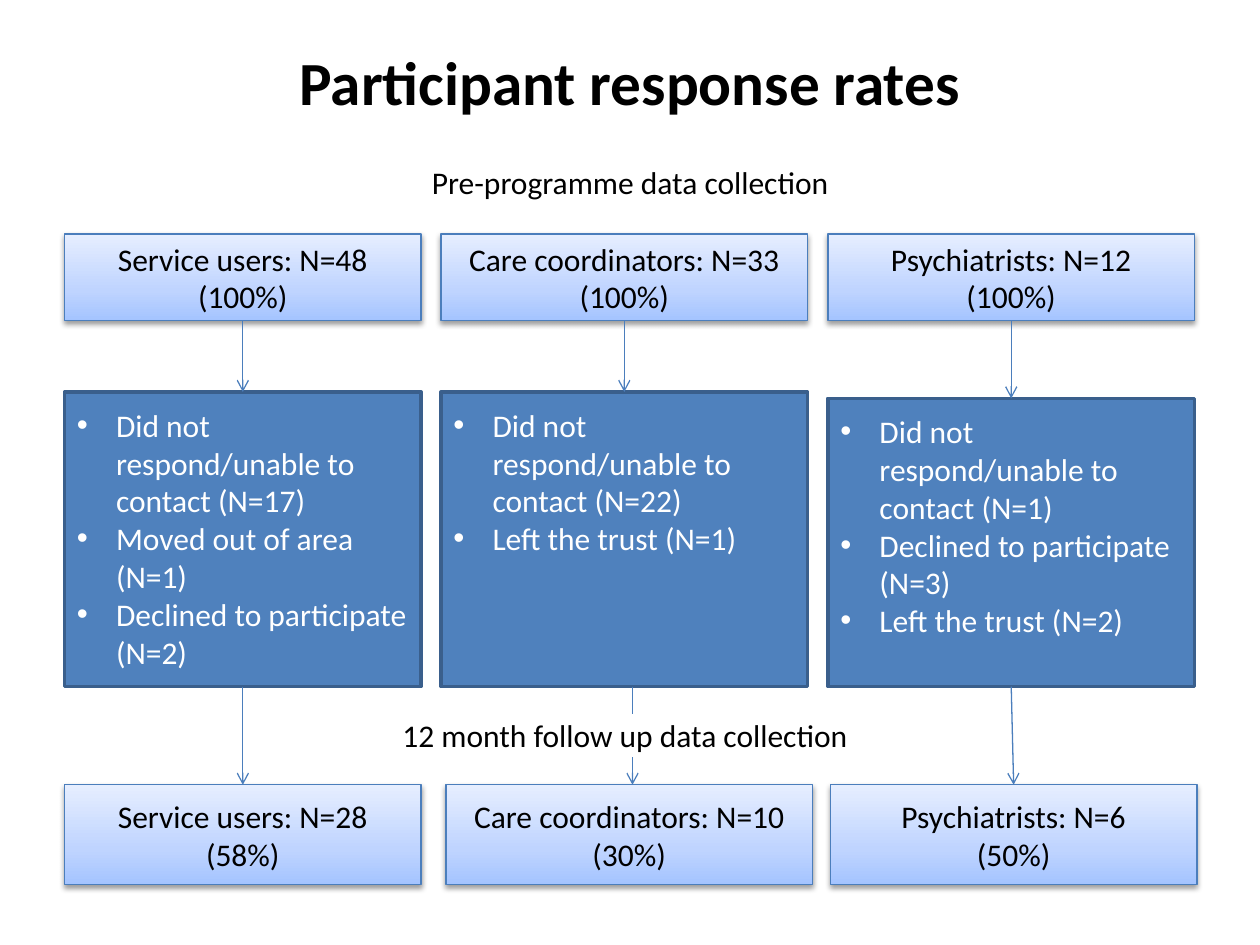
from copy import deepcopy
from dataclasses import dataclass

from lxml.etree import SubElement
from pptx import Presentation
from pptx.dml.color import RGBColor
from pptx.enum.shapes import MSO_CONNECTOR, MSO_SHAPE
from pptx.enum.text import MSO_ANCHOR, PP_ALIGN
from pptx.oxml.ns import qn
from pptx.util import Cm, Pt


@dataclass(frozen=True)
class Theme:
    font: str = "Calibri"
    title_size: float = 35
    body_size: float = 18
    dark: str = "000000"
    light: str = "FFFFFF"
    panel: str = "4F81BD"
    panel_edge: str = "3A5F8C"
    accent: str = "4B7EBC"
    gradient: tuple = ((0, "A4C4FF"), (0.35, "BFD4FF"), (1, "E6EEFF"))
    thin: float = 0.75
    thick: float = 2


THEME = Theme()
BOTTOM, TOP = 2, 0
GROUP_TOP, GROUP_HEIGHT = 4.72, 1.75
REASONS_BOTTOM = 13.84
FOLLOW_TOP, FOLLOW_HEIGHT = 15.82, 2.01

# One entry per column: left edges, width, top of reasons, and wording
COLUMNS = [
    {"left": 1.3, "follow_left": 1.3, "width": 7.19, "reasons_top": 7.9,
     "before": ["Service users: N=48 (100%)"],
     "reasons": ["Did not respond/unable to contact (N=17)",
                 "Moved out of area (N=1)", "Declined to participate (N=2)"],
     "after": ["Service users: N=28", "(58%)"]},
    {"left": 8.89, "follow_left": 8.99, "width": 7.39, "reasons_top": 7.9,
     "before": ["Care coordinators: N=33 (100%)"],
     "reasons": ["Did not respond/unable to contact (N=22)",
                 "Left the trust (N=1)"],
     "after": ["Care coordinators: N=10 (30%)"],
     "follow_arrow": 12.75},
    {"left": 16.69, "follow_left": 16.74, "width": 7.39, "reasons_top": 8.03,
     "before": ["Psychiatrists: N=12", "(100%)"],
     "reasons": ["Did not respond/unable to contact (N=1)",
                 "Declined to participate (N=3)", "Left the trust (N=2)"],
     "after": ["Psychiatrists: N=6", "(50%)"]},
]


def write_text(frame, lines, color, align=PP_ALIGN.CENTER,
               size=THEME.body_size, bold=False):
    frame.word_wrap = True
    frame.vertical_anchor = MSO_ANCHOR.MIDDLE
    font_format = {"name": THEME.font, "size": Pt(size), "bold": bold}
    for index, line in enumerate(lines):
        para = frame.add_paragraph() if index else frame.paragraphs[0]
        para.alignment = align
        span = para.add_run()
        span.text = line
        for name, value in font_format.items():
            setattr(span.font, name, value)
        span.font.color.rgb = RGBColor.from_string(color)


def add_rectangle(page, box, edge, weight, fill=None):
    shape = page.shapes.add_shape(MSO_SHAPE.RECTANGLE, *map(Cm, box))
    shape.shadow.inherit = False
    shape.line.color.rgb = RGBColor.from_string(edge)
    shape.line.width = Pt(weight)
    if fill:
        shape.fill.solid()
        shape.fill.fore_color.rgb = RGBColor.from_string(fill)
    return shape


def add_title(page, box, text):
    title = page.shapes.add_textbox(*map(Cm, box))
    write_text(title.text_frame, [text], THEME.dark,
               size=THEME.title_size, bold=True)


def add_stage_label(page, box, text):
    label = add_rectangle(page, box, THEME.light, THEME.thick, THEME.light)
    write_text(label.text_frame, [text], THEME.dark)


def add_group_box(page, box, lines):
    shape = add_rectangle(page, box, THEME.accent, THEME.thin)
    # Three-stop gradient, running upwards
    shape.fill.gradient()
    shape.fill.gradient_angle = 90
    stop_list = shape.element.spPr.find(".//" + qn("a:gsLst"))
    stop_list.append(deepcopy(stop_list[0]))
    for stop, (position, color) in zip(shape.fill.gradient_stops, THEME.gradient):
        stop.position = position
        stop.color.rgb = RGBColor.from_string(color)
    # Soft shadow below
    effects = shape.element.spPr.find(qn("a:effectLst"))
    shadow = SubElement(effects, qn("a:outerShdw"), blurRad=str(Pt(3.1)),
                        dist=str(Pt(1.6)), dir="5400000", rotWithShape="0")
    color = SubElement(shadow, qn("a:srgbClr"), val=THEME.dark)
    SubElement(color, qn("a:alpha"), val="38000")
    write_text(shape.text_frame, lines, THEME.dark)
    return shape


def add_reasons_box(page, box, reasons):
    shape = add_rectangle(page, box, THEME.panel_edge, THEME.thick, THEME.panel)
    frame = shape.text_frame
    write_text(frame, reasons, THEME.light, PP_ALIGN.LEFT)
    frame.vertical_anchor = MSO_ANCHOR.TOP
    frame.margin_top = Cm(0.28)
    indent = Cm(0.79)
    for para in frame.paragraphs:
        properties = para._p.get_or_add_pPr()
        properties.set("marL", str(indent))
        properties.set("indent", str(-indent))
        SubElement(properties, qn("a:buFont"), typeface="Arial")
        SubElement(properties, qn("a:buChar"), char="•")
    return shape


def add_arrow(page, upper, lower, center=None):
    """Join two boxes, or run straight down at the given centre."""
    across = Cm(center or 0)
    arrow = page.shapes.add_connector(MSO_CONNECTOR.STRAIGHT, across,
                                      upper.top + upper.height, across, lower.top)
    if center is None:
        arrow.begin_connect(upper, BOTTOM)
        arrow.end_connect(lower, TOP)
    arrow.line.color.rgb = RGBColor.from_string(THEME.accent)
    arrow.line.width = Pt(THEME.thin)
    SubElement(arrow.line._get_or_add_ln(), qn("a:tailEnd"), type="arrow")
    SubElement(arrow._element.spPr, qn("a:effectLst"))


def add_column(page, column):
    left, width, top = column["left"], column["width"], column["reasons_top"]
    before = add_group_box(page, (left, GROUP_TOP, width, GROUP_HEIGHT),
                           column["before"])
    reasons = add_reasons_box(page, (left, top, width, REASONS_BOTTOM - top),
                              column["reasons"])
    after = add_group_box(
        page, (column["follow_left"], FOLLOW_TOP, width, FOLLOW_HEIGHT),
        column["after"])
    add_arrow(page, before, reasons)
    add_arrow(page, reasons, after, column.get("follow_arrow"))


def main():
    deck = Presentation()
    deck.slide_width, deck.slide_height = Cm(25.4), Cm(19.05)
    page = deck.slides.add_slide(deck.slide_layouts[6])

    add_title(page, (1.27, 0.76, 22.86, 1.75), "Participant response rates")
    add_stage_label(page, (1.3, 3.07, 22.81, 1.19), "Pre-programme data collection")
    for column in COLUMNS:
        add_column(page, column)
    # Drawn last so that it covers the middle arrow
    add_stage_label(page, (7.75, 14.43, 9.7, 0.79),
                    "12 month follow up data collection")
    deck.save("out.pptx")


if __name__ == "__main__":
    main()
